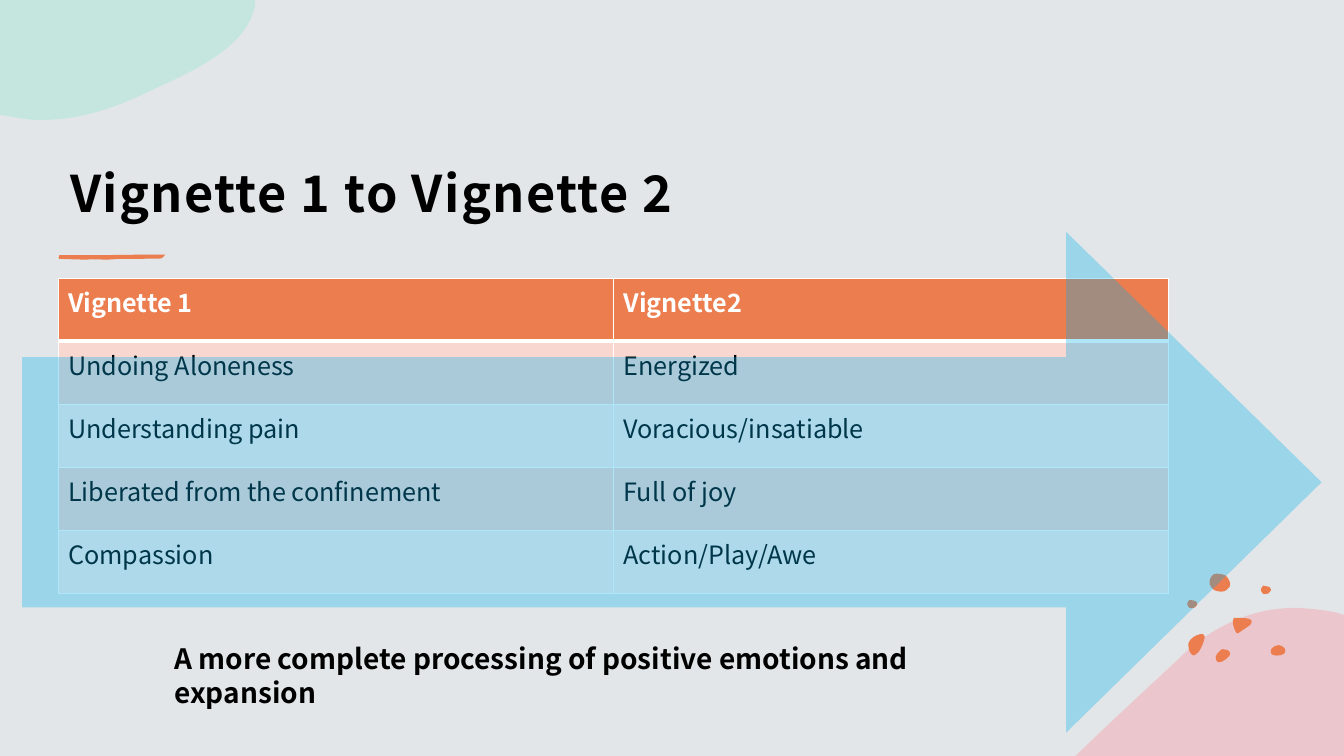
from lxml import etree
from pptx import Presentation
from pptx.dml.color import RGBColor
from pptx.enum import shapes, text
from pptx.oxml import ns
from pptx.util import Pt

FONT = "Noto Sans CJK JP"
ORANGE, WHITE, BLACK = "EB7D4E", "FFFFFF", "000000"
BANDS = ["F7D7D0", "FBECE9"]

TITLE = "Vignette 1 to Vignette 2"
ROWS = [
    ("Vignette 1", "Vignette2"),
    ("Undoing Aloneness", "Energized"),
    ("Understanding pain", "Voracious/insatiable"),
    ("Liberated from the confinement", "Full of joy"),
    ("Compassion", "Action/Play/Awe"),
]
CLOSING = "A more complete processing of positive emotions and expansion"

# Outlines: a start point, then lines (2 numbers) or cubic curves (6 numbers)
PINK = [
    (927.4, 434.2), (936.7, 434.9, 946.1, 435.6, 955.4, 437.8),
    (960, 439.2), (960, 540), (768, 540), (769, 539.3),
    (793.4, 515.5, 818.6, 492.5, 841.7, 470.9),
    (857.5, 455, 874.1, 445.7, 890.6, 439.9),
    (902.9, 435.6, 915.1, 434.2, 927.4, 434.2),
]
MINT = [
    (0, 0), (182.2, 0), (182.2, 4.3),
    (176.4, 31.7, 144, 48.2, 113.8, 61.9),
    (88.6, 74.2, 61.9, 85.7, 29.5, 85.7),
    (22.3, 85.7, 15.8, 85, 9.4, 83.5), (0, 82.1),
]
DASH = [
    (61.9, 185.5), (65.5, 185.2), (77, 185.5), (84.2, 185), (95, 185),
    (106.6, 184.8), (113, 184.8),
    (117.4, 185, 115.9, 182.9, 118.1, 181.9), (111.6, 181.9),
    (95.8, 182), (79.9, 182.2), (63.4, 182.3), (54, 182.2), (42.5, 182.2),
    (41.8, 182.9, 41, 185.8, 43.9, 185), (54, 185.3),
]
PEBBLE = [
    (900.7, 421.9), (900.7, 421.9, 900.7, 419, 902.2, 418.3),
    (903.6, 418.3, 904.3, 418.3, 905.8, 419),
    (906.5, 419, 907.9, 419.8, 907.9, 421.2),
    (907.9, 421.9, 907.2, 422.6, 906.5, 423.4),
    (906.5, 423.4, 906.5, 424.1, 905, 424.1),
    (904.3, 424.1, 902.9, 424.8, 902.2, 424.1),
    (901.4, 422.6, 900.7, 422.6, 900.7, 421.9),
]
DOTS = [
    [(873.4, 463.7), (874.8, 463.7, 875.5, 463.7, 877, 464.4),
     (878.4, 465.1, 879.1, 466.6, 878.4, 468),
     (877, 470.2, 872.6, 473.8, 869.8, 473),
     (869, 472.3, 868.3, 470.9, 868.3, 469.4),
     (868.3, 468, 869.8, 466.6, 871.2, 465.1),
     (871.9, 464.4, 872.6, 463.7, 873.4, 463.7)],
    [(857.5, 452.9), (859, 452.9, 860.4, 452.9, 860.4, 454.3),
     (860.4, 455, 860.4, 455, 860.4, 455.8),
     (859.7, 459.4, 858.2, 463, 856.1, 465.8),
     (854.6, 467.3, 852.5, 469.4, 851, 467.3),
     (848.9, 465.1, 848.9, 461.5, 848.9, 459.4),
     (849.6, 457.2, 851, 456.5, 852.5, 455),
     (853.2, 455, 855.4, 452.9, 857.5, 452.9)],
    [(913.7, 460.8), (915.1, 460.8, 917.3, 462.2, 918, 463.7),
     (918.7, 465.1, 918, 466.6, 916.6, 467.3),
     (914.4, 468.7, 908.6, 468.7, 907.9, 466.6),
     (907.2, 465.1, 907.9, 463.7, 908.6, 463),
     (910.1, 461.5, 911.5, 460.8, 913.7, 460.8)],
    [(864.7, 418.3), (864, 418.3, 863.3, 414, 865.4, 411.8),
     (866.9, 410.4, 866.9, 409.7, 869, 409.7),
     (871.2, 409.7, 874.1, 410.4, 875.5, 411.1),
     (877, 412.6, 879.8, 416.2, 878.4, 419),
     (876.2, 421.2, 875.5, 422.6, 872.6, 422.6),
     (870.5, 422.6, 866.9, 421.9, 866.2, 420.5),
     (864.7, 419, 864.7, 419, 864.7, 418.3)],
    [(884.2, 441.4), (888.5, 441.4, 896.4, 441.4, 893.5, 445.7),
     (893.5, 446.4, 892.8, 447.1, 892.1, 447.1),
     (889.9, 448.6, 887.8, 450, 885.6, 451.4),
     (884.9, 452.2, 884.2, 452.9, 883.4, 452.2),
     (883.4, 452.2, 882.7, 451.4, 882.7, 451.4),
     (881.3, 448.6, 880.6, 446.4, 880.6, 443.5),
     (880.6, 442.8, 880.6, 442.1, 881.3, 441.4)],
]


def paint(fill, color, alpha=100):
    fill.solid()
    fill.fore_color.rgb = RGBColor.from_string(color)
    if alpha < 100:
        node = fill._xPr.find(".//" + ns.qn("a:srgbClr"))
        etree.SubElement(node, ns.qn("a:alpha"), val=str(alpha * 1000))


def finish(shape, color, alpha=100):
    """Flat fill with no line and no shadow."""
    shape.shadow.inherit = False
    shape.line.fill.background()
    paint(shape.fill, color, alpha)


def blob(path, color, alpha=100, dx=0, dy=0):
    """Freeform whose six-number segments become cubic curves."""
    pts = [(Pt(seg[i] + dx), Pt(seg[i + 1] + dy))
           for seg in path for i in range(0, len(seg), 2)]
    form = slide.shapes.build_freeform(*pts[0], scale=1.0)
    form.add_line_segments(pts[1:], close=True)
    shape = form.convert_to_shape()
    lines = iter(list(shape._element.iter(ns.qn("a:lnTo"))))
    for seg in path[1:]:
        line = next(lines)
        if len(seg) == 6:
            line.addprevious(curve := etree.Element(ns.qn("a:cubicBezTo")))
            for part in (line, next(lines), next(lines)):
                curve.append(part[0])
                part.getparent().remove(part)
    finish(shape, color, alpha)


def style(para, size, color, bold):
    font = para.font
    font.name, font.size, font.bold = FONT, Pt(size), bold
    font.color.rgb = RGBColor.from_string(color)


def label(words, box, size, space):
    frame = slide.shapes.add_textbox(*map(Pt, box)).text_frame
    frame.word_wrap = True
    para = frame.paragraphs[0]
    para.text, para.line_spacing = words, space
    style(para, size, BLACK, True)
    return frame


def edge(cell, widths):
    """White borders: left, right, top, bottom."""
    props = cell._tc.get_or_add_tcPr()
    for i, (side, width) in enumerate(zip("LRTB", widths)):
        line = etree.Element(ns.qn("a:ln" + side), w=str(Pt(width)))
        fill = etree.SubElement(line, ns.qn("a:solidFill"))
        etree.SubElement(fill, ns.qn("a:srgbClr"), val=WHITE)
        props.insert(i, line)


deck = Presentation()
deck.slide_width, deck.slide_height = Pt(960), Pt(540)
slide = deck.slides.add_slide(deck.slide_layouts[6])
paint(slide.background.fill, "E2E6E8")

blob(PINK, "F5A8B1", 50)
for dot in DOTS:
    blob(dot, ORANGE)
for dx, dy in [(0, 0), (-52.6, 10.1)]:
    blob(PEBBLE, ORANGE, dx=dx, dy=dy)
blob(MINT, "AAE6D8", 50)
blob(DASH, ORANGE)

head = label(TITLE, (41.5, 62, 793.4, 104.4), 36, 1.17)
head.vertical_anchor = text.MSO_ANCHOR.BOTTOM
head.margin_left = head.margin_right = head.margin_top = Pt(8.64)
head.margin_bottom = Pt(7.2)
head.paragraphs[0].runs[0]._r.get_or_add_rPr().set("spc", "100")

grid = slide.shapes.add_table(
    len(ROWS), 2, Pt(41.5), Pt(198.7), Pt(793.4), Pt(225.4)).table
for r, row in enumerate(ROWS):
    for c, words in enumerate(row):
        cell = grid.cell(r, c)
        cell.text = words
        style(cell.text_frame.paragraphs[0], 18, BLACK if r else WHITE, r == 0)
        paint(cell.fill, BANDS[(r - 1) % 2] if r else ORANGE)
        edge(cell, (0.96, 0.96, 3 if r == 1 else 0.96, 0.96 if r else 3))

arrow = slide.shapes.add_shape(
    shapes.MSO_SHAPE.RIGHT_ARROW, Pt(15.8), Pt(165.6), Pt(928.2), Pt(357.8))
arrow.adjustments[0], arrow.adjustments[1] = 0.5, 0.51
finish(arrow, "00B0F0", 31)

label(CLOSING, (117.4, 455, 641.5, 31), 20, 1.0)

deck.save("out.pptx")
